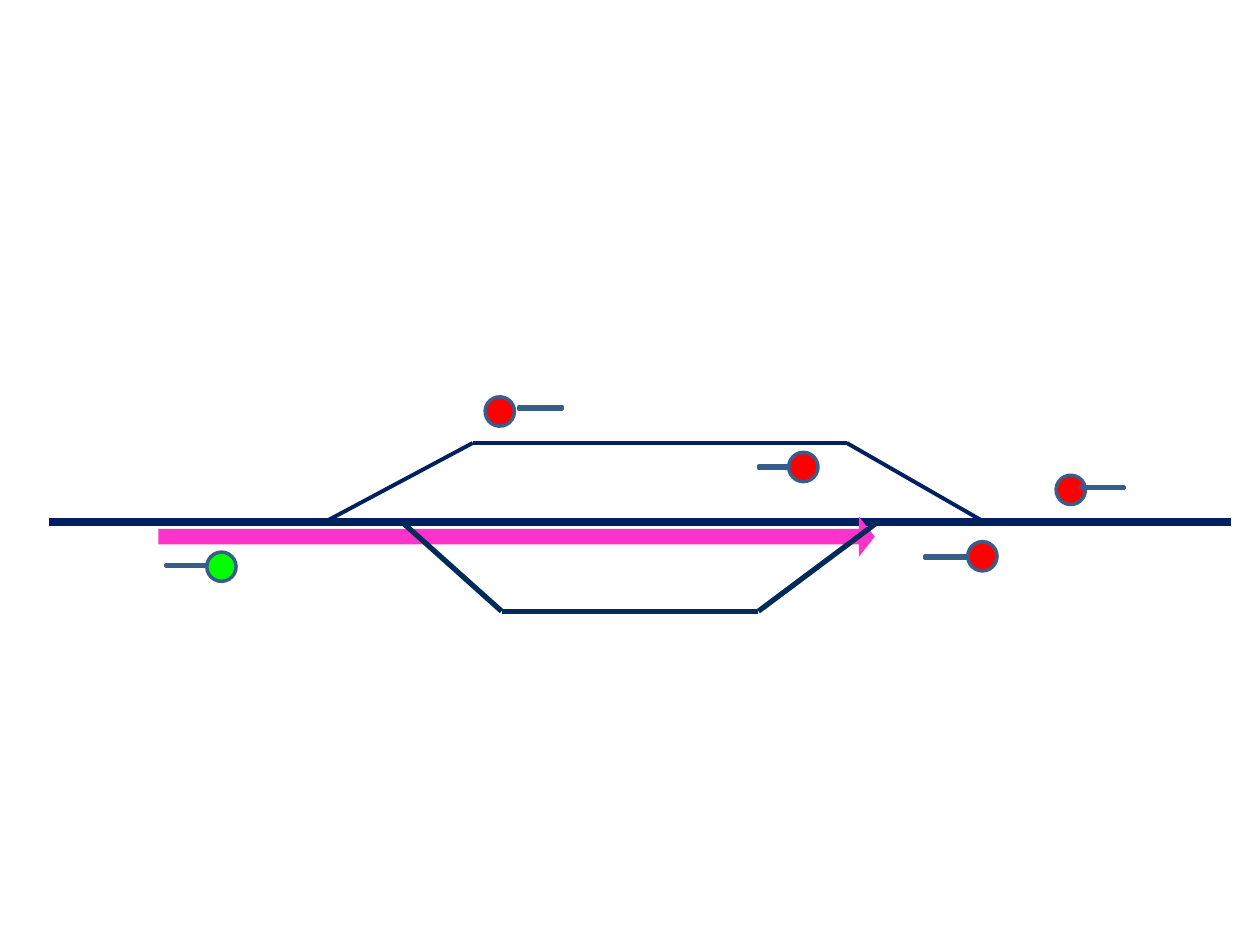
"""Draw a railway passing station with its signals and a through route."""
import itertools
from dataclasses import dataclass

import lxml.etree
import pptx
import pptx.dml.color
import pptx.enum.shapes
import pptx.oxml.ns
import pptx.util

Cm = pptx.util.Cm
SHAPE = pptx.enum.shapes.MSO_SHAPE
MAIN_Y = 10.52
LAMP_SIZE = 0.59
ARM_HEIGHT = 0.2
OUTLINE, ARM_FILL = "385D8A", "4F81BD"
RED, GREEN, PINK = "FF0000", "00FF00", "FF33CC"


@dataclass
class Track:
    points: list[tuple[float, float]]
    color: str
    width: float


@dataclass
class Signal:
    lamp: tuple[float, float]
    arm: tuple[float, float]
    color: str = RED
    arm_width: float = 1.19
    rotation: float = 0


MAIN_TRACK = Track([(0.99, MAIN_Y), (24.82, MAIN_Y)], "002060", 4.5)
UPPER_LOOP = Track(
    [(6.55, MAIN_Y), (9.53, 8.93), (17.07, 8.93), (19.84, MAIN_Y)], "002060", 2.25
)
LOWER_LOOP = Track(
    [(8.1, MAIN_Y), (10.11, 12.32), (15.29, 12.32), (17.7, MAIN_Y)], "002B59", 3
)
SIGNALS = [
    Signal((4.17, 11.13), (3.18, 11.3), GREEN),
    Signal((15.9, 9.12), (15.09, 9.32), arm_width=1.57),
    Signal((19.51, 10.92), (18.49, 11.13)),
    Signal((21.29, 9.58), (21.64, 9.73), rotation=169),
]
DEPARTURE_SIGNAL = Signal((9.78, 8.0), (10.31, 8.13), rotation=169)


def rgb(value: str) -> pptx.dml.color.RGBColor:
    """Turn a hex string into a colour."""
    return pptx.dml.color.RGBColor.from_string(value)


def format_line(line, color: str, width: float) -> None:
    """Give a line its colour and its width in points."""
    line.fill.solid()
    line.fill.fore_color.rgb = rgb(color)
    line.width = pptx.util.Pt(width)


def draw_track(shapes, track: Track) -> None:
    """Join the points of a track with straight lines."""
    for start, end in itertools.pairwise(track.points):
        rail = shapes.add_connector(
            pptx.enum.shapes.MSO_CONNECTOR.STRAIGHT, *map(Cm, start + end)
        )
        format_line(rail.line, track.color, track.width)
        lxml.etree.SubElement(
            rail._element.spPr, pptx.oxml.ns.qn("a:effectLst")
        )


def draw_shape(shapes, preset, box, fill: str, outline: str, width: float, **values):
    """Draw a filled preset shape and set its further values."""
    shape = shapes.add_shape(preset, *map(Cm, box))
    shape.shadow.inherit = False
    shape.fill.solid()
    shape.fill.fore_color.rgb = rgb(fill)
    format_line(shape.line, outline, width)
    for name, value in values.items():
        setattr(shape, name, value)
    return shape


def draw_signal(shapes, signal: Signal) -> None:
    """Draw a lamp and its arm, with the right-hand one in front."""
    lamp = (SHAPE.FLOWCHART_CONNECTOR, (*signal.lamp, LAMP_SIZE, LAMP_SIZE), signal.color)
    arm = (SHAPE.MATH_MINUS, (*signal.arm, signal.arm_width, ARM_HEIGHT), ARM_FILL)
    rotations = {lamp: signal.rotation, arm: 0}
    for part in sorted((lamp, arm), key=lambda part: part[1][0]):
        draw_shape(shapes, *part, OUTLINE, 2, rotation=rotations[part])


def draw_route(shapes) -> None:
    """Draw the arrow of the through route with sharp corners."""
    route = draw_shape(shapes, SHAPE.RIGHT_ARROW, (3.3, 10.72, 14.2, 0.2), PINK, PINK, 6)
    route.adjustments[0] = 0.5
    route.adjustments[1] = 0.395
    corner = lxml.etree.SubElement(
        route.line._get_or_add_ln(), pptx.oxml.ns.qn("a:miter")
    )
    corner.set("lim", "800000")


def main() -> None:
    """Build and save the slide."""
    deck = pptx.Presentation()
    for name, value in {"slide_width": Cm(25.4), "slide_height": Cm(19.05)}.items():
        setattr(deck, name, value)
    shapes = deck.slides.add_slide(deck.slide_layouts[6]).shapes
    for track in (MAIN_TRACK, UPPER_LOOP):
        draw_track(shapes, track)
    for signal in SIGNALS:
        draw_signal(shapes, signal)
    draw_route(shapes)
    draw_signal(shapes, DEPARTURE_SIGNAL)
    draw_track(shapes, LOWER_LOOP)
    deck.save("out.pptx")


if __name__ == "__main__":
    main()
